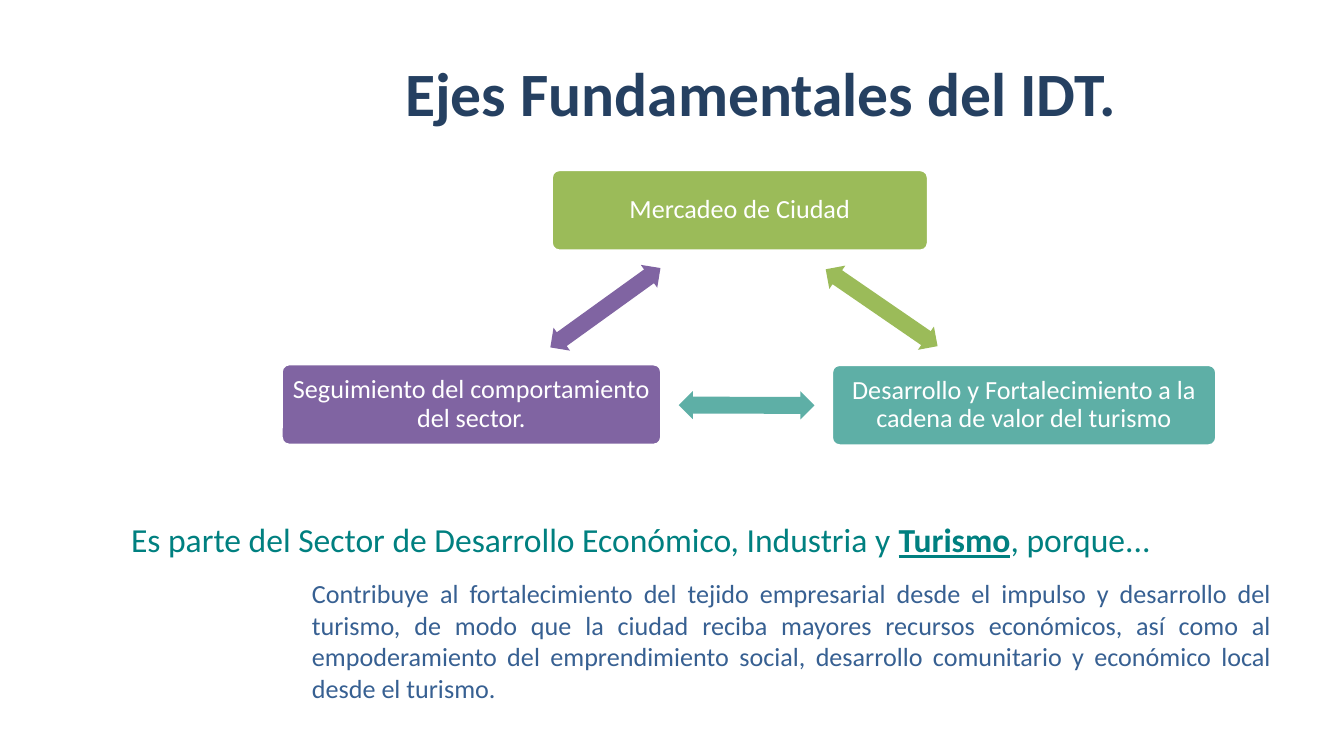
from pptx import Presentation
from pptx.dml.color import RGBColor
from pptx.enum.shapes import MSO_SHAPE
from pptx.enum.text import MSO_ANCHOR, MSO_AUTO_SIZE, PP_ALIGN
from pptx.util import Pt

PX = 4572  # 200 px to the inch
ROUNDED, DOUBLE_ARROW = MSO_SHAPE.ROUNDED_RECTANGLE, MSO_SHAPE.LEFT_RIGHT_ARROW
TOP, MIDDLE = MSO_ANCHOR.TOP, MSO_ANCHOR.MIDDLE
LEFT, CENTER, JUSTIFY = PP_ALIGN.LEFT, PP_ALIGN.CENTER, PP_ALIGN.JUSTIFY
COLORS = {
    "navy": "254061", "blue": "376092", "teal": "008080", "white": "FFFFFF",
    "green": "9BBB59", "aqua": "5EAFA6", "purple": "8064A2",
}


def rgb(name):
    return RGBColor.from_string(COLORS[name])


def emu(*lengths):
    return [length * PX for length in lengths]


def write(shape, text, size, color, bold=False, align=LEFT, anchor=TOP,
          insets=(15, 7), spacing=None, indent=0, emphasis=None):
    """Fill a shape with one paragraph; the emphasis word is bold and underlined."""
    frame = shape.text_frame
    frame.word_wrap = True
    frame.auto_size = MSO_AUTO_SIZE.NONE
    frame.vertical_anchor = anchor
    frame.margin_left = frame.margin_right = insets[0] * PX
    frame.margin_top = frame.margin_bottom = insets[1] * PX
    para = frame.paragraphs[0]
    para.alignment = align
    if spacing:
        para.line_spacing = spacing
    if indent:
        properties = para._p.get_or_add_pPr()
        properties.set("marL", str(indent * PX))
        properties.set("indent", "0")
    before, found, after = text.partition(emphasis) if emphasis else (text, "", "")
    for part in filter(None, (before, found, after)):
        span = para.add_run()
        span.text = part
        font = span.font
        font.name, font.size, font.color.rgb = "Calibri", Pt(size), rgb(color)
        font.bold = bold or part == emphasis
        font.underline = part == emphasis


def add_title(page, box, text):
    title = page.shapes.title
    title.left, title.top, title.width, title.height = emu(*box)
    write(title, text, 33, "navy", bold=True, anchor=MIDDLE, spacing=0.9)


def add_filled(page, kind, box, color, adjustments):
    shape = page.shapes.add_shape(kind, *emu(*box))
    shape.shadow.inherit = False
    shape.fill.solid()
    shape.fill.fore_color.rgb = rgb(color)
    shape.line.fill.background()
    for index, value in enumerate(adjustments):
        shape.adjustments[index] = value
    return shape


def add_cycle(page, box):
    """Three linked axes, each followed by the arrow of its colour."""
    left, top = box[:2]
    axes = [
        ("Mercadeo de Ciudad", "green", (402, 0, 562), (793, 185, 34.5)),
        ("Desarrollo y Fortalecimiento a la cadena de valor del turismo",
         "aqua", (819, 290, 574), (592, 330, 180.1)),
        ("Seguimiento del comportamiento del sector.",
         "purple", (0, 289, 567), (382, 185, 324.2)),
    ]
    for text, color, (x, y, width), (arrow_x, arrow_y, angle) in axes:
        axis = add_filled(page, ROUNDED, (left + x, top + y, width, 122), color, [0.1])
        axis.line.color.rgb = rgb("white")
        axis.line.width = Pt(2)
        write(axis, text, 14, "white", align=CENTER, anchor=MIDDLE,
              insets=(12, 12), spacing=0.9)
        arrow = add_filled(page, DOUBLE_ARROW, (left + arrow_x, top + arrow_y, 202, 42),
                           color, [0.6, 0.5])
        arrow.rotation = angle


def add_note(page, box, text, size, color, **style):
    write(page.shapes.add_textbox(*emu(*box)), text, size, color, indent=31, **style)


def main():
    deck = Presentation()
    deck.slide_width, deck.slide_height = emu(2000, 1125)
    page = deck.slides.add_slide(deck.slide_layouts[5])
    add_title(page, (588, 34, 1276, 218), "Ejes Fundamentales del IDT.")
    add_cycle(page, (418, 252, 1394, 412))
    add_note(page, (418, 853, 1490, 252),
             "Contribuye al fortalecimiento del tejido empresarial desde el impulso y "
             "desarrollo del turismo, de modo que la ciudad reciba mayores recursos "
             "económicos, así como al empoderamiento del emprendimiento social, "
             "desarrollo comunitario y económico local desde el turismo.",
             14, "blue", align=JUSTIFY)
    add_note(page, (149, 766, 1668, 214),
             "Es parte del Sector de Desarrollo Económico, Industria y Turismo, porque...",
             18, "teal", emphasis="Turismo")
    deck.save("out.pptx")


if __name__ == "__main__":
    main()
